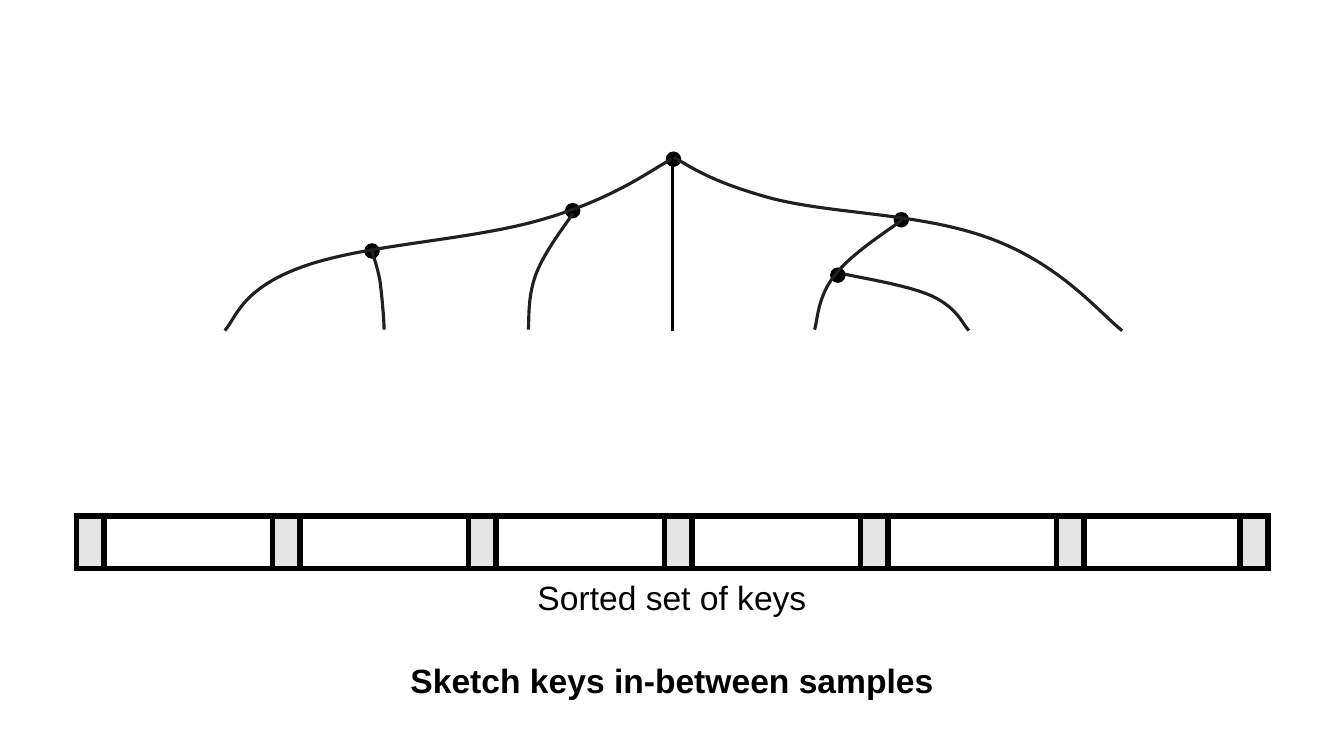
from pptx import Presentation
from pptx.dml.color import RGBColor
from pptx.enum.shapes import MSO_CONNECTOR, MSO_SHAPE
from pptx.enum.text import MSO_ANCHOR, MSO_AUTO_SIZE, PP_ALIGN
from pptx.oxml.ns import qn
from pptx.util import Pt
from lxml import etree

EMU_PER_PX = 9144
BLANK_LAYOUT = 6
FONT = "Arial"
BLACK = RGBColor(0x00, 0x00, 0x00)
CHARCOAL = RGBColor(0x20, 0x20, 0x20)
LIGHT_GRAY = RGBColor(0xE7, 0xE6, 0xE6)

RECTANGLE = MSO_SHAPE.RECTANGLE
OVAL = MSO_SHAPE.OVAL
STRAIGHT = MSO_CONNECTOR.STRAIGHT
CENTER = PP_ALIGN.CENTER
TOP = MSO_ANCHOR.TOP
FIT_SHAPE = MSO_AUTO_SIZE.SHAPE_TO_FIT_TEXT

NODE_SIZE = 14
NODES = [(438, 0), (338, 51), (139, 91), (664, 60), (601, 115)]
STEM = [(444, 7), (444, 177)]
BRANCHES = [
    [(443, 7), (422, 18), (387, 46), (314, 67), (241, 88), (142, 91), (79, 113),
     (16, 135), (11, 165), (0, 177)],
    [(145, 96), (147, 102), (151, 112), (154, 128), (156, 144), (158, 167), (158, 176)],
    [(345, 61), (338, 72), (318, 97), (309, 120), (300, 143), (302, 166), (301, 176)],
    [(445, 5), (460, 13), (480, 29), (543, 46), (606, 62), (691, 60), (760, 86),
     (830, 112), (868, 160), (890, 177)],
    [(672, 67), (659, 77), (622, 100), (605, 122), (588, 143), (588, 166), (585, 176)],
    [(615, 121), (632, 125), (678, 132), (702, 143), (727, 155), (732, 171), (738, 177)],
]

SAMPLE_WIDTH = 27
EVEN_SAMPLES = 6
EVEN_SPAN = 972
LAST_SAMPLE = 1154


def px(value):
    return round(value * EMU_PER_PX)


def set_line(shape, color, points):
    shape.line.color.rgb = color
    shape.line.width = Pt(points)
    outline = shape._element.spPr.find(qn("a:ln"))
    etree.SubElement(outline, qn("a:miter"), lim="800000")


def add_box(shapes, preset, box, fill, line_points):
    shape = shapes.add_shape(preset, *map(px, box))
    shape.shadow.inherit = False
    if fill is None:
        shape.fill.background()
    else:
        shape.fill.solid()
        shape.fill.fore_color.rgb = fill
    set_line(shape, BLACK, line_points)


def curve_segments(shape):
    segments = list(shape._element.iter(qn("a:lnTo")))
    outline = segments[0].getparent()
    for start in range(0, len(segments), 3):
        curve = etree.SubElement(outline, qn("a:cubicBezTo"))
        for segment in segments[start:start + 3]:
            curve.append(segment[0])
            outline.remove(segment)


def add_branch(shapes, points):
    start, *controls = [(px(x), px(y)) for x, y in points]
    builder = shapes.build_freeform(*start)
    builder.add_line_segments(controls, close=False)
    branch = builder.convert_to_shape()
    curve_segments(branch)
    branch.shadow.inherit = False
    branch.fill.background()
    set_line(branch, CHARCOAL, 2.25)


def add_stem(shapes, start, end):
    stem = shapes.add_connector(STRAIGHT, *map(px, start + end))
    set_line(stem, BLACK, 2.25)
    etree.SubElement(stem._element.spPr, qn("a:effectLst"))


def add_tree(slide, left, top):
    def place(points):
        return [(left + x, top + y) for x, y in points]

    shapes = slide.shapes.add_group_shape().shapes
    for node in place(NODES):
        add_box(shapes, OVAL, (*node, NODE_SIZE, NODE_SIZE), BLACK, 1)
    for branch in BRANCHES[:3]:
        add_branch(shapes, place(branch))
    add_stem(shapes, *place(STEM))
    for branch in BRANCHES[3:]:
        add_branch(shapes, place(branch))


def add_key_bar(slide, left, top, width, height):
    add_box(slide.shapes, RECTANGLE, (left, top, width, height), None, 4)
    offsets = [EVEN_SPAN * index / (EVEN_SAMPLES - 1) for index in range(EVEN_SAMPLES)]
    for offset in offsets + [LAST_SAMPLE]:
        add_box(slide.shapes, RECTANGLE, (left + offset, top, SAMPLE_WIDTH, height),
                LIGHT_GRAY, 4)


def add_caption(slide, box, text, bold):
    frame = slide.shapes.add_textbox(*map(px, box)).text_frame
    frame.word_wrap = True
    frame.auto_size = FIT_SHAPE
    frame.vertical_anchor = TOP
    paragraph = frame.paragraphs[0]
    paragraph.alignment = CENTER
    run = paragraph.add_run()
    run.text = text
    run.font.name = FONT
    run.font.size = Pt(24)
    run.font.bold = bold
    run.font.color.rgb = BLACK


def main():
    presentation = Presentation()
    presentation.slide_width = px(1333)
    presentation.slide_height = px(750)
    slide = presentation.slides.add_slide(presentation.slide_layouts[BLANK_LAYOUT])
    add_caption(slide, (68, 567, 1197, 50), "Sorted set of keys", False)
    add_caption(slide, (68, 650, 1197, 50), "Sketch keys in-between samples", True)
    add_tree(slide, 223, 151)
    add_key_bar(slide, 76, 512, 1182, 52)
    presentation.save("out.pptx")


if __name__ == "__main__":
    main()
